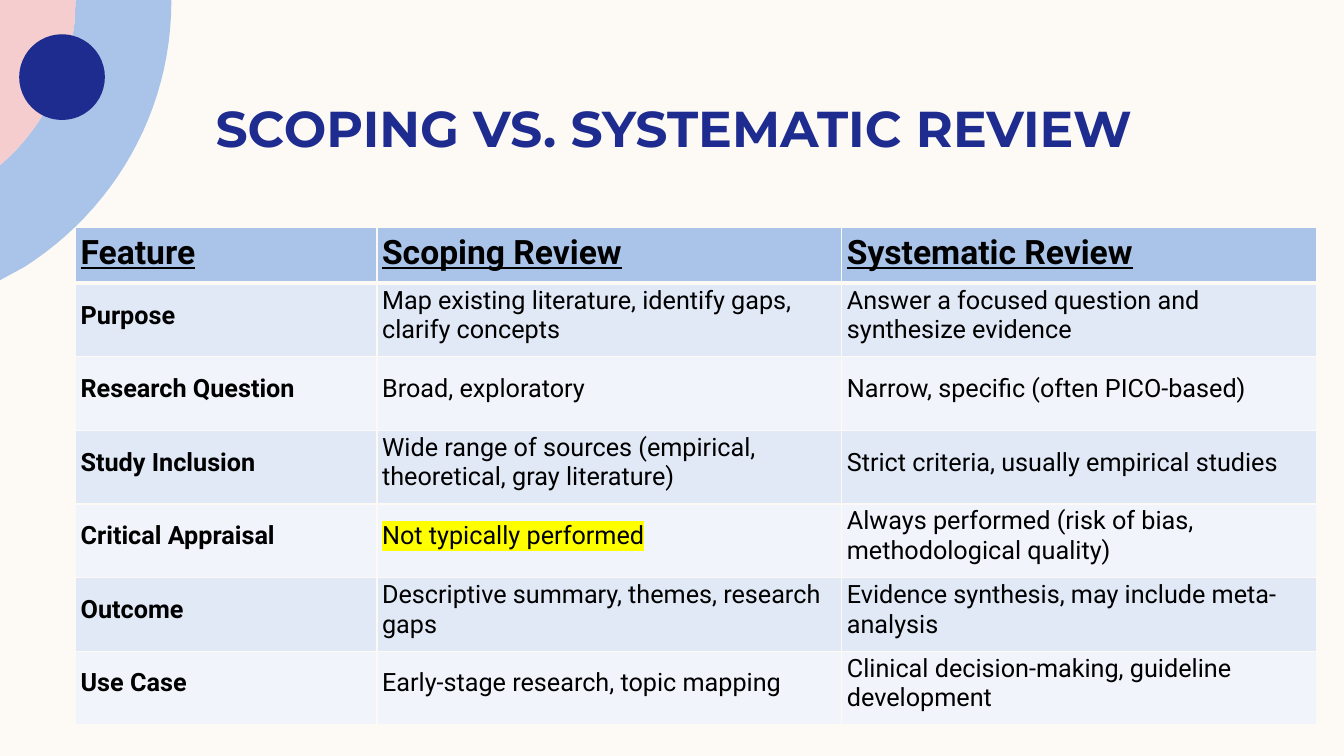
import pptx
import pptx.chart.data
import pptx.dml.color
import pptx.enum.shapes
import pptx.enum.text
import pptx.oxml
import pptx.oxml.ns
import pptx.util
from lxml import etree

Inches = pptx.util.Inches
Anchor = pptx.enum.text.MSO_ANCHOR

COLORS = {
    "cream": "FDFAF6",
    "blue": "AAC3E8",
    "pink": "F5CDCE",
    "navy": "1F2C8F",
    "black": "000000",
    "odd_row": "E2E9F6",
    "even_row": "F1F5FB",
    "marker": "FFFF00",
}
TITLE = "SCOPING VS. SYSTEMATIC REVIEW"
ROWS = [
    ("Feature", "Scoping Review", "Systematic Review"),
    ("Purpose", "Map existing literature, identify gaps, clarify concepts",
     "Answer a focused question and synthesize evidence"),
    ("Research Question", "Broad, exploratory", "Narrow, specific (often PICO-based)"),
    ("Study Inclusion", "Wide range of sources (empirical, theoretical, gray literature)",
     "Strict criteria, usually empirical studies"),
    ("Critical Appraisal", "Not typically performed",
     "Always performed (risk of bias, methodological quality)"),
    ("Outcome", "Descriptive summary, themes, research gaps",
     "Evidence synthesis, may include meta-analysis"),
    ("Use Case", "Early-stage research, topic mapping",
     "Clinical decision-making, guideline development"),
]
HIGHLIGHTED = "Not typically performed"
COLUMN_WIDTHS = (2.99, 4.61, 4.71)
HEADER_HEIGHT, ROW_HEIGHT = 0.55, 0.73
ARCS = [
    ("blue", [(0.75, 0), (1.7, 0), (1.7, 0.01), (1.7, 1.12, 1.12, 2.09, 0.24, 2.65),
              (0, 2.78), (0, 1.64), (0.11, 1.54), (0.46, 1.19, 0.68, 0.73, 0.74, 0.22)]),
    ("pink", [(0, 0), (0.75, 0), (0.74, 0.22), (0.68, 0.73, 0.46, 1.19, 0.11, 1.54),
              (0, 1.64)]),
]
CURVE_STEPS = 24


def rgb(name):
    return pptx.dml.color.RGBColor.from_string(COLORS[name])


def paint(shape, color):
    shape.shadow.inherit = False
    shape.fill.solid()
    shape.fill.fore_color.rgb = rgb(color)
    shape.line.fill.background()


def trace(outline):
    points = []
    for step in outline:
        if len(step) == 2:
            points.append(step)
            continue
        controls = [points[-1], step[:2], step[2:4], step[4:]]
        for index in range(1, CURVE_STEPS + 1):
            t = index / CURVE_STEPS
            weights = ((1 - t) ** 3, 3 * t * (1 - t) ** 2, 3 * t * t * (1 - t), t ** 3)
            points.append(tuple(sum(w * c[axis] for w, c in zip(weights, controls))
                                for axis in (0, 1)))
    return [(Inches(x), Inches(y)) for x, y in points]


def write(frame, text, size=18, font="Roboto", color="black", bold=False,
          underline=False, highlight=None):
    span = frame.paragraphs[0].add_run()
    span.text = text
    span.font.size = pptx.util.Pt(size)
    span.font.name = font
    span.font.bold = bold
    span.font.underline = underline
    span.font.color.rgb = rgb(color)
    if highlight:
        mark = etree.Element(pptx.oxml.ns.qn("a:highlight"))
        etree.SubElement(mark, pptx.oxml.ns.qn("a:srgbClr"), val=COLORS[highlight])
        span.font.fill._xPr.find(pptx.oxml.ns.qn("a:latin")).addprevious(mark)


def add_borders(cell, widths):
    properties = cell._tc.get_or_add_tcPr()
    for position, (side, width) in enumerate(widths.items()):
        line = etree.Element(pptx.oxml.ns.qn("a:ln" + side), w=str(pptx.util.Pt(width)))
        fill = etree.SubElement(line, pptx.oxml.ns.qn("a:solidFill"))
        etree.SubElement(fill, pptx.oxml.ns.qn("a:srgbClr"), val=COLORS["cream"])
        properties.insert(position, line)


def add_decor(page):
    for color, outline in ARCS:
        points = trace(outline)
        builder = page.shapes.build_freeform(*points[0])
        builder.add_line_segments(points[1:], close=True)
        paint(builder.convert_to_shape(), color)
    dot = page.shapes.add_shape(pptx.enum.shapes.MSO_SHAPE.OVAL, Inches(0.19),
                                Inches(0.34), Inches(0.85), Inches(0.85))
    paint(dot, "navy")


def add_title(page):
    box = page.shapes.add_textbox(Inches(2.04), Inches(0.76), Inches(10.8), Inches(0.8))
    frame = box.text_frame
    frame.word_wrap = True
    frame.vertical_anchor = Anchor.BOTTOM
    frame.margin_top = frame.margin_bottom = 0
    write(frame, TITLE, size=36, font="Montserrat", color="navy", bold=True)


def add_comparison(page):
    heights = [HEADER_HEIGHT] + [ROW_HEIGHT] * (len(ROWS) - 1)
    table = page.shapes.add_table(
        len(ROWS), len(COLUMN_WIDTHS), Inches(0.75), Inches(2.26),
        Inches(sum(COLUMN_WIDTHS)), Inches(sum(heights))).table
    for column, width in zip(table.columns, COLUMN_WIDTHS):
        column.width = Inches(width)
    for r, (texts, height) in enumerate(zip(ROWS, heights)):
        table.rows[r].height = Inches(height)
        header = r == 0
        color = "blue" if header else "odd_row" if r % 2 else "even_row"
        for c, text in enumerate(texts):
            cell = table.cell(r, c)
            cell.fill.solid()
            cell.fill.fore_color.rgb = rgb(color)
            cell.vertical_anchor = Anchor.BOTTOM if header else Anchor.MIDDLE
            cell.margin_left, cell.margin_top = Inches(0.05), Inches(0.01)
            cell.margin_right = cell.margin_bottom = Inches(0.1)
            add_borders(cell, {"L": 1, "R": 1, "T": 3 if r == 1 else 1,
                               "B": 3 if header else 1})
            write(cell.text_frame, text, size=24 if header else 18,
                  bold=header or c == 0, underline=header,
                  highlight="marker" if text == HIGHLIGHTED else None)


def main():
    deck = pptx.Presentation()
    deck.slide_width, deck.slide_height = Inches(13.33), Inches(7.5)
    page = deck.slides.add_slide(deck.slide_layouts[6])
    page.background.fill.solid()
    page.background.fill.fore_color.rgb = rgb("cream")
    add_decor(page)
    add_title(page)
    add_comparison(page)
    deck.save("out.pptx")


if __name__ == "__main__":
    main()
